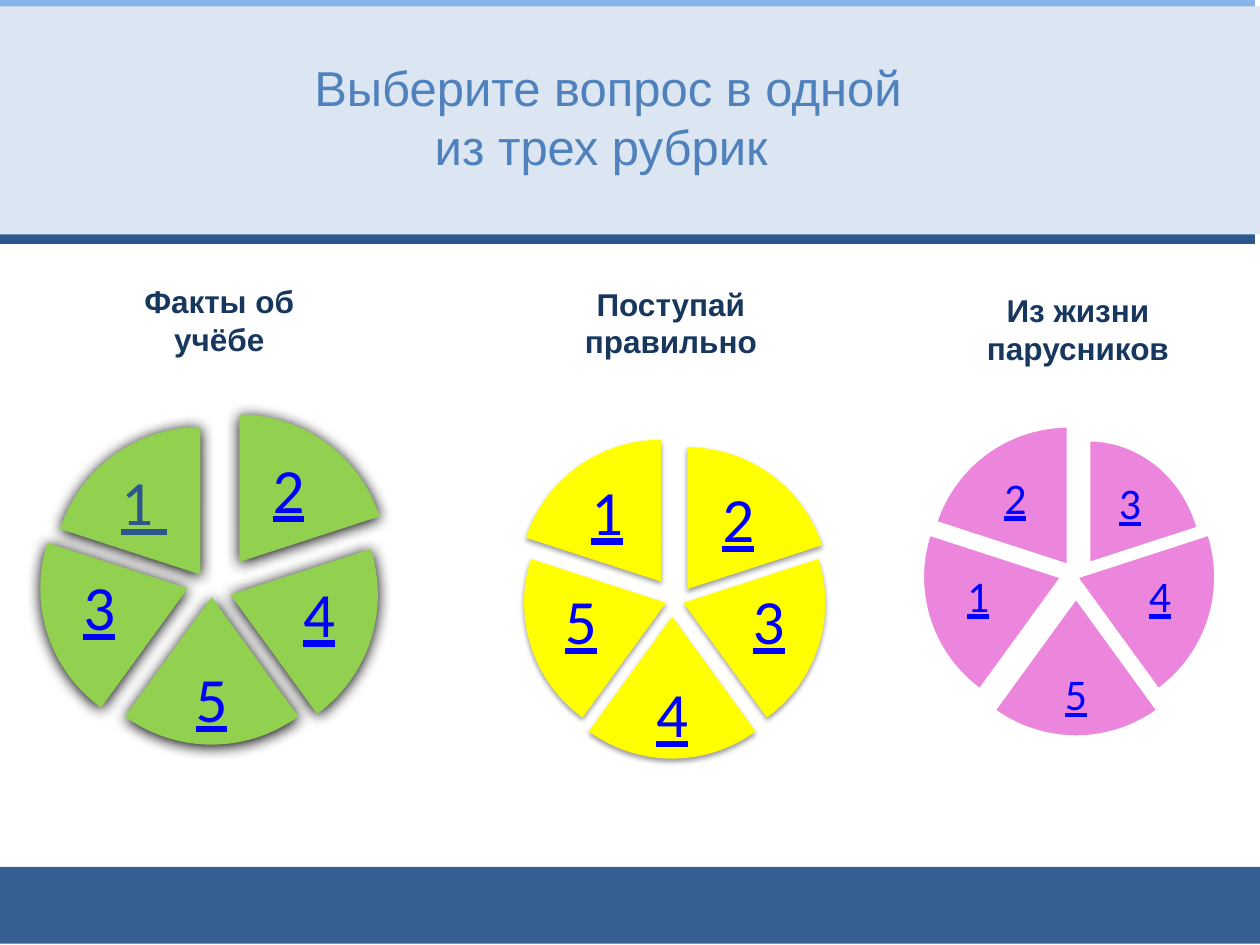
from copy import deepcopy
from dataclasses import dataclass

from lxml import etree
from pptx import Presentation
from pptx import util as u
from pptx.dml.color import RGBColor
from pptx.enum import shapes, text
from pptx.oxml.ns import qn


@dataclass(frozen=True)
class Theme:
    sans: str = "Arial"
    body: str = "Calibri"
    navy: str = "2B578D"
    steel: str = "5589C7"
    sky: str = "8BB6E9"
    pale: str = "DCE6F2"
    foot: str = "376092"
    title: str = "4F81BD"
    head: str = "17375E"
    link: str = "0000FF"
    green: str = "92D050"
    yellow: str = "FFFF00"
    pink: str = "EC86DD"
    white: str = "FFFFFF"
    black: str = "000000"
    big: int = 28
    mid: int = 18
    digit: int = 36
    small: int = 25
    gap: int = 20


COLS, ROWS = 100, 75
TURN, FIRST, SWEEP = 360, 270, 72
LABELS = [
    (0.51, 0.15, 0.34, 0.23),
    (0.65, 0.45, 0.3, 0.25),
    (0.32, 0.75, 0.36, 0.21),
    (0.05, 0.45, 0.3, 0.25),
    (0.14, 0.15, 0.34, 0.23),
]


class Page:
    def __init__(self, deck, theme):
        self.theme = theme
        self.slide = deck.slides.add_slide(deck.slide_layouts[6])
        self.col = deck.slide_width / COLS
        self.row = deck.slide_height / ROWS

    def place(self, box):
        x, y, w, h = box
        return [round(v) for v in (x * self.col, y * self.row, w * self.col, h * self.row)]

    def shape(self, kind, box, fill=None, home=None):
        item = (home or self.slide).shapes.add_shape(kind, *self.place(box))
        item.shadow.inherit = False
        item.line.fill.background()
        if fill:
            item.fill.solid()
            item.fill.fore_color.rgb = RGBColor.from_string(fill)
        return item

    def band(self, box, fill):
        return self.shape(shapes.MSO_SHAPE.RECTANGLE, box, fill)

    def blend(self, box, tones):
        fill = self.shape(shapes.MSO_SHAPE.RECTANGLE, box).fill
        fill.gradient()
        fill.gradient_angle = 90
        last = fill._fill._gradFill.find(qn("a:gsLst"))[-1]
        last.addprevious(deepcopy(last))
        for i, (stop, tone) in enumerate(zip(fill.gradient_stops, tones)):
            stop.color.rgb = RGBColor.from_string(tone)
            stop.position = i / (len(tones) - 1)

    def text(self, box, runs, home=None, inset=None, space=None):
        item = (home or self.slide).shapes.add_textbox(*self.place(box))
        frame = item.text_frame
        frame.word_wrap = True
        if inset is None:
            frame.auto_size = text.MSO_AUTO_SIZE.SHAPE_TO_FIT_TEXT
        else:
            frame.vertical_anchor = text.MSO_ANCHOR.MIDDLE
            for side in ("left", "top", "right", "bottom"):
                setattr(frame, f"margin_{side}", u.Inches(inset))
        para = frame.paragraphs[0]
        para.alignment = text.PP_ALIGN.CENTER
        para.line_spacing = space
        for words, size, tone, face, bold, under in runs:
            run = para.add_run()
            run.text = words
            font = run.font
            font.size, font.name = u.Pt(size), face
            font.bold, font.underline = bold, under
            font.color.rgb = RGBColor.from_string(tone)

    def head(self, box, words):
        t = self.theme
        self.text(box, [(words, t.mid, t.head, t.sans, True, False)])

    def shade(self, item, alpha, blur, dist):
        node = item._element.spPr.find(qn("a:effectLst"))
        glow = etree.SubElement(node, qn("a:outerShdw"), blurRad=str(u.Pt(blur)),
                                dist=str(u.Pt(dist)), dir="5400000", rotWithShape="0")
        tone = etree.SubElement(glow, qn("a:srgbClr"), val=self.theme.black)
        etree.SubElement(tone, qn("a:alpha"), val=str(alpha * 1000))

    def wheel(self, spots, labels, fill, size, inset, shade=None):
        t = self.theme
        home = self.slide.shapes.add_group_shape()
        for i, (spot, runs, part) in enumerate(zip(spots, labels, LABELS)):
            x, y, w, h = spot
            slice_ = self.shape(shapes.MSO_SHAPE.PIE, spot, fill, home)
            for n in range(2):
                angle = (FIRST + SWEEP * (i + n)) % TURN
                slice_.adjustments[n] = angle * 0.6
            if shade:
                self.shade(slice_, *shade)
            else:
                slice_.line.color.rgb = RGBColor.from_string(t.white)
                slice_.line.width = u.Pt(2)
            left, top, wide, high = part
            box = (x + left * w, y + top * h, wide * w, high * h)
            if isinstance(runs, str):
                runs = [(runs, size, t.link, t.body, False, True)]
            self.text(box, runs, home, inset, 0.9)


def discs(size, spots):
    return [(x, y, size, size) for x, y in spots]


def main():
    t = Theme()
    deck = Presentation()
    deck.slide_width, deck.slide_height = u.Inches(10), u.Inches(7.5)
    page = Page(deck, t)

    page.band((-0.3, 68.8, 100.4, 6.1), t.foot)
    page.blend((0, -0.1, 99.6, 19.5), (t.navy, t.steel, t.sky))
    page.band((-0.3, 0.5, 100.4, 18.1), t.pale)
    page.text((21.7, 4.1, 53.1, 10.4),
              [("Выберите вопрос в одной из трех рубрик ", t.big, t.title, t.sans, False, False)])

    two = [("2", t.digit, t.link, t.body, False, True),
           (" ", t.gap, t.navy, t.body, False, False)]
    one = [("1 ", t.digit, t.navy, t.body, False, True)]
    page.wheel(
        discs(23.4, [(7.3, 32.9), (6.6, 35.5), (5.1, 35.7), (3.2, 35), (4.2, 33.9)]),
        [two, "4", "5", "3", one], t.green, t.digit, 0.05, (100, 8.5, 1))
    page.wheel(
        discs(22.5, [(43.3, 35.5), (43, 36.6), (42.1, 37.7), (41.6, 36.6), (41.2, 34.9)]),
        "23451", t.yellow, t.digit, 0.05, (38, 3.1, 1.6))
    page.wheel(
        [(77.3, 34.9, 18.2, 19.7)]
        + discs(22.2, [(74.3, 34.7), (74.3, 36.3), (73.2, 34.7), (73.7, 33.8)]),
        "34512", t.pink, t.small, 0.03)

    page.head((6.7, 21.9, 21.4, 7.1), "Факты об учёбе")
    page.head((43.6, 22.1, 19.3, 7.1), "Поступай правильно")
    page.head((77, 22.6, 17.1, 7.1), "Из жизни парусников")
    deck.save("out.pptx")


if __name__ == "__main__":
    main()
